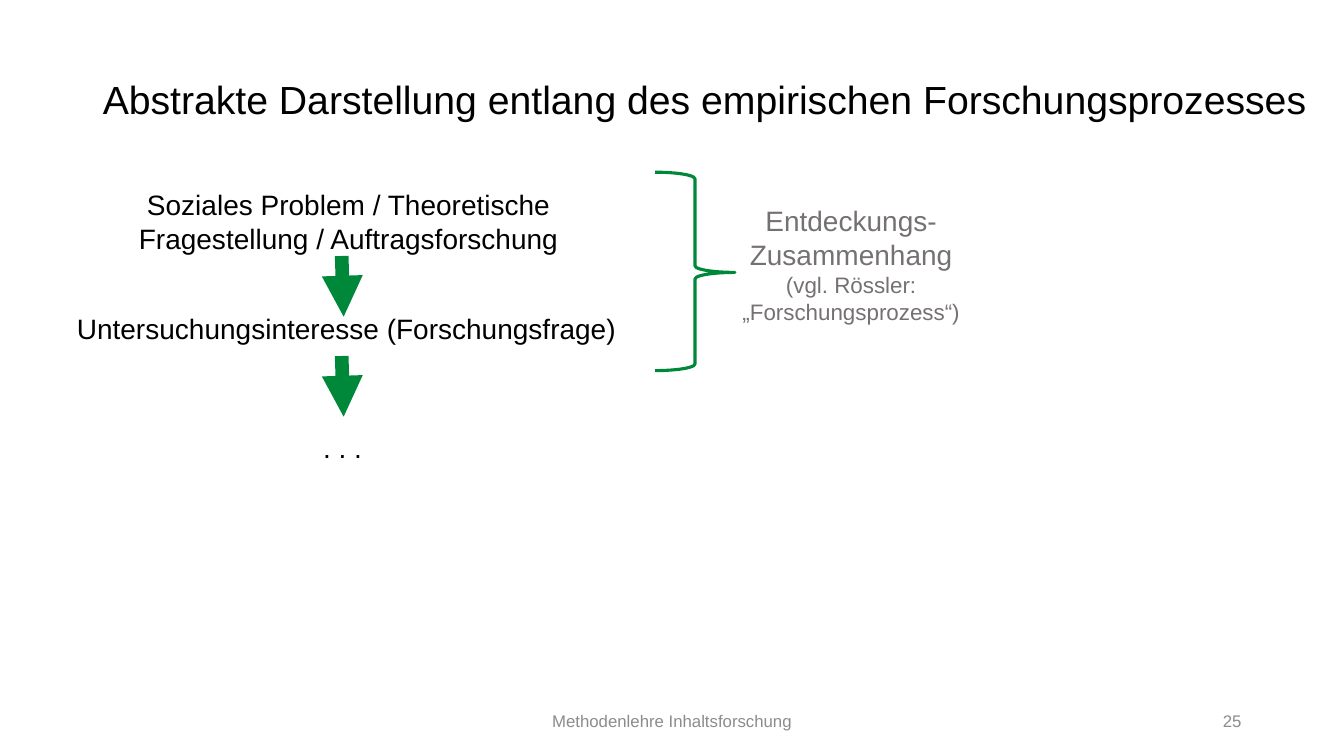
from dataclasses import dataclass

from pptx import Presentation
from pptx.dml.color import RGBColor
from pptx.enum import shapes, text
from pptx.oxml import ns, xmlchemy
from pptx.util import Cm, Pt

BLACK = RGBColor(0x00, 0x00, 0x00)
GREEN = RGBColor(0x00, 0x88, 0x3A)
GREY = RGBColor(0x76, 0x71, 0x71)
FOOTER_GREY = RGBColor(0x8C, 0x8C, 0x8C)
FONT = "Arial"
LEFT, CENTER, RIGHT = text.PP_ALIGN.LEFT, text.PP_ALIGN.CENTER, text.PP_ALIGN.RIGHT
TOP, MIDDLE, BOTTOM = text.MSO_ANCHOR.TOP, text.MSO_ANCHOR.MIDDLE, text.MSO_ANCHOR.BOTTOM


@dataclass
class Label:
    """A text block; box is left, top, width, height in cm."""
    box: tuple[float, float, float, float]
    lines: list[str]
    sizes: list[int]
    color: RGBColor = BLACK
    align: text.PP_ALIGN = CENTER
    anchor: text.MSO_ANCHOR = TOP
    inset: tuple[float, float] = (0, 0)


def fill_text(sp, label: Label) -> None:
    """Place a shape and set its text and formatting."""
    sp.left, sp.top, sp.width, sp.height = map(Cm, label.box)
    tf = sp.text_frame
    tf.text = "\n".join(label.lines)
    tf.word_wrap = True
    tf.auto_size = text.MSO_AUTO_SIZE.NONE
    tf.vertical_anchor = label.anchor
    tf.margin_left = tf.margin_right = Cm(label.inset[0])
    tf.margin_top = tf.margin_bottom = Cm(label.inset[1])
    for p, size in zip(tf.paragraphs, label.sizes):
        p.alignment = label.align
        p.space_before = Pt(0)
        for r in p.runs:
            r.font.name = FONT
            r.font.size = Pt(size)
            r.font.color.rgb = label.color


def add_label(s, label: Label) -> None:
    fill_text(s.shapes.add_textbox(0, 0, 0, 0), label)


def add_arrow(s, top: float) -> None:
    """Draw a thick, nearly vertical arrow starting at top (cm)."""
    line = s.shapes.add_connector(shapes.MSO_CONNECTOR.STRAIGHT,
                                  Cm(8.61), Cm(top), Cm(8.66), Cm(top + 1.53))
    line.line.color.rgb = GREEN
    line.line.width = Pt(9.75)
    line.line._get_or_add_ln().append(xmlchemy.OxmlElement("a:tailEnd"))
    line.line._get_or_add_ln().find(ns.qn("a:tailEnd")).set("type", "triangle")
    line._element.spPr.append(xmlchemy.OxmlElement("a:effectLst"))


INSET = (0.25, 0.13)
TITLE = Label((2.34, 1.02, 31.01, 2.21),
              ["Abstrakte Darstellung entlang des empirischen Forschungsprozesses"],
              [28], align=LEFT, anchor=BOTTOM, inset=INSET)
PROBLEM = Label((1.09, 4.6, 15.39, 2.01),
                ["Soziales Problem / Theoretische Fragestellung / Auftragsforschung"],
                [20], inset=INSET)
LABELS = [
    Label((1.04, 7.85, 15.39, 0.86), ["Untersuchungsinteresse (Forschungsfrage)"], [20]),
    Label((0.94, 10.85, 15.39, 0.86), [". . ."], [20]),
    Label((17.27, 5.13, 8.36, 2.01),
          ["Entdeckungs-", "Zusammenhang", "(vgl. Rössler:", "„Forschungsprozess“)"],
          [20, 20, 16, 16], GREY),
    Label((5.28, 17.65, 23.32, 1.02), ["Methodenlehre Inhaltsforschung"], [12],
          FOOTER_GREY, anchor=MIDDLE, inset=INSET),
    Label((28.8, 17.65, 2.74, 1.02), ["25"], [12],
          FOOTER_GREY, RIGHT, MIDDLE, INSET),
]


def main() -> None:
    prs = Presentation()
    prs.slide_width, prs.slide_height = Cm(33.87), Cm(19.05)
    s = prs.slides.add_slide(prs.slide_layouts[1])

    # Title and first step
    fill_text(s.shapes.title, TITLE)
    s.shapes.title.text_frame.paragraphs[0].line_spacing = 0.9
    body = s.placeholders[1]
    fill_text(body, PROBLEM)
    pPr = body.text_frame.paragraphs[0]._p.get_or_add_pPr()
    pPr.set("marL", "0")
    pPr.set("indent", "0")
    pPr.append(xmlchemy.OxmlElement("a:buNone"))

    # Remaining steps, explanation and footer
    for label in LABELS:
        add_label(s, label)

    # Arrows between the steps
    for top in (6.45, 8.97):
        add_arrow(s, top)

    # Brace around the steps
    brace = s.shapes.add_shape(shapes.MSO_SHAPE.RIGHT_BRACE,
                               Cm(16.51), Cm(4.34), Cm(2.01), Cm(5))
    brace.adjustments[0] = 0.083
    brace.adjustments[1] = 0.505
    brace.shadow.inherit = False
    brace.fill.background()
    brace.line.color.rgb = GREEN
    brace.line.width = Pt(2.25)

    prs.save("out.pptx")


if __name__ == "__main__":
    main()
